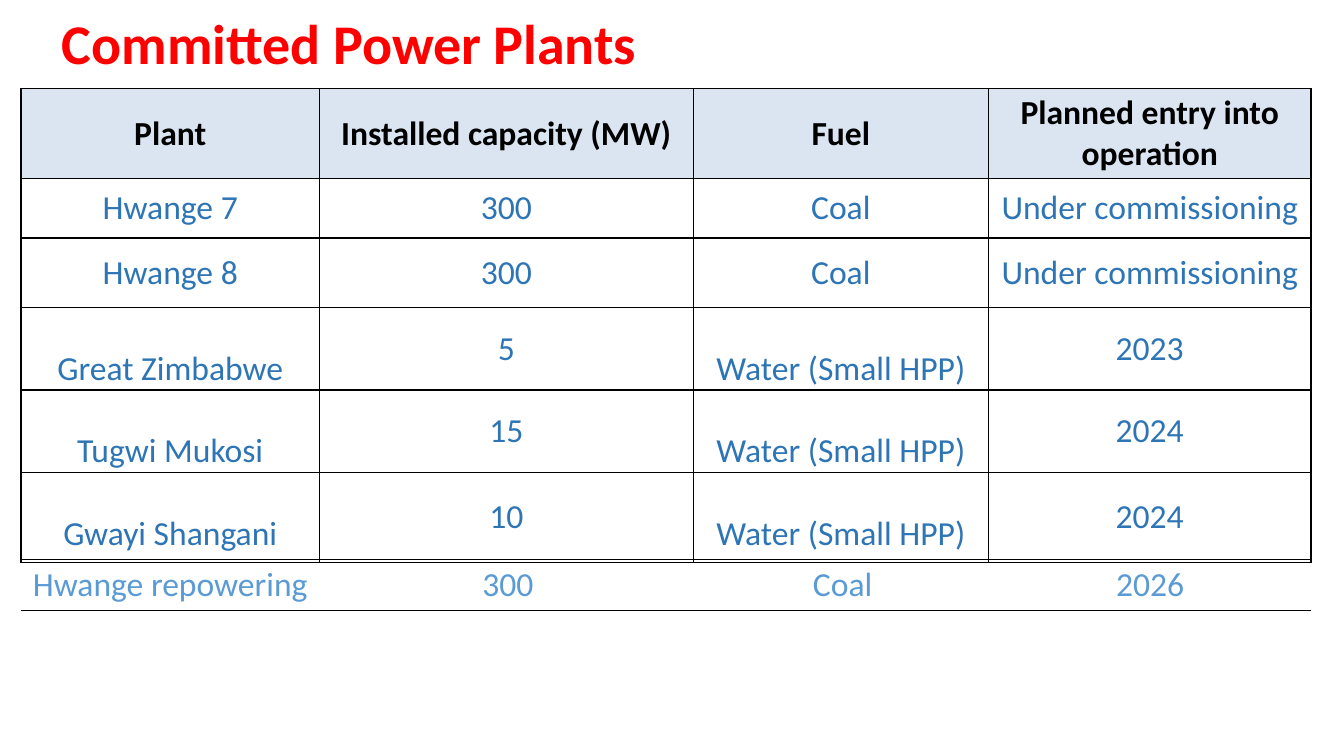
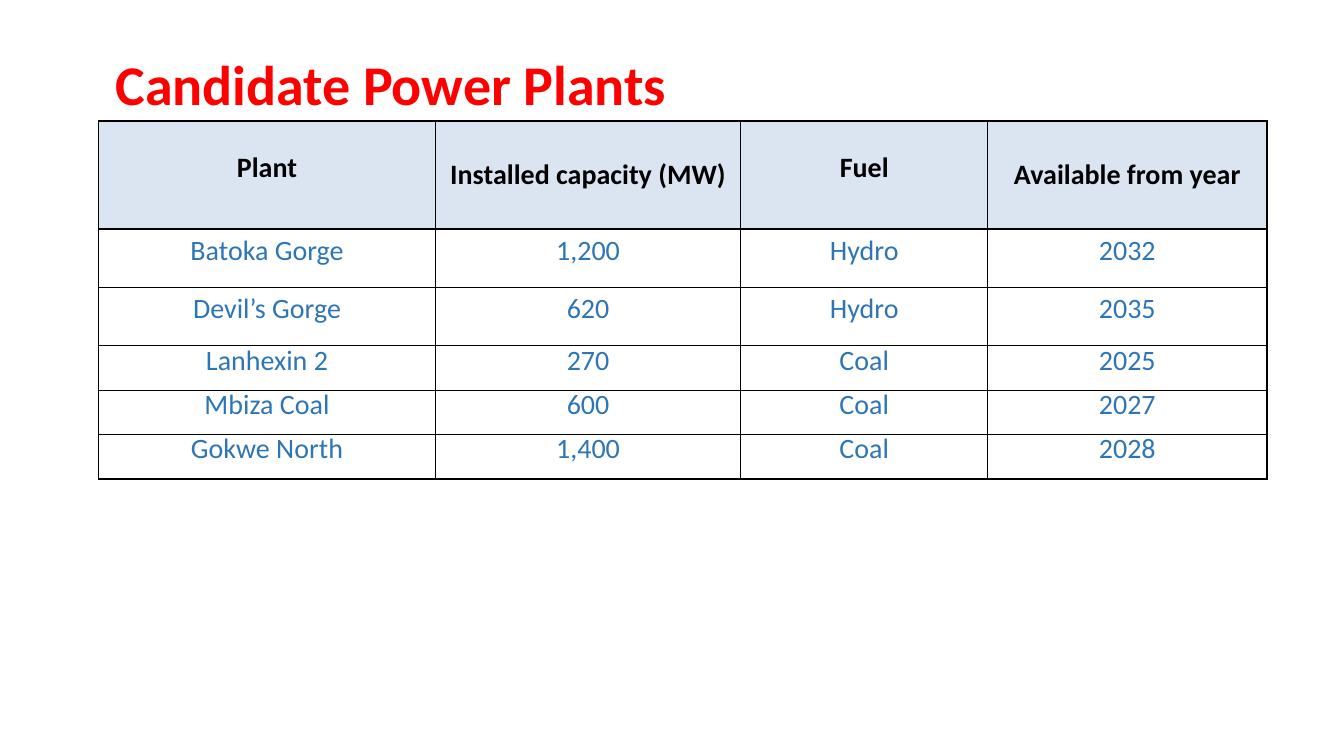
from dataclasses import dataclass

from lxml import etree
from pptx import Presentation
from pptx.dml.color import RGBColor
from pptx.enum.text import MSO_ANCHOR, PP_ALIGN
from pptx.oxml.ns import qn
from pptx.util import Cm, Pt

CENTER, LEFT = PP_ALIGN.CENTER, PP_ALIGN.LEFT
TOP, MIDDLE = MSO_ANCHOR.TOP, MSO_ANCHOR.MIDDLE
TITLE_ONLY = 5
SIDES = ("L", "R", "T", "B")


@dataclass(frozen=True)
class Theme:
    font: str = "Calibri"
    title: str = "FF0000"
    heading: str = "000000"
    body: str = "2E75B6"
    extra: str = "5B9BD5"
    header_fill: str = "DBE5F1"
    border: str = "000000"
    border_width: int = Pt(1)
    title_size: int = Pt(40)
    large: int = Pt(24)
    medium: int = Pt(20)
    tight_line: int = Pt(14)
    side_inset: int = Cm(0.18)
    drop: int = Cm(1.03)  # one line of large text


THEME = Theme()

COMMITTED = [
    ("Plant", "Installed capacity (MW)", "Fuel", "Planned entry into operation"),
    ("Hwange 7", "300", "Coal", "Under commissioning"),
    ("Hwange 8", "300", "Coal", "Under commissioning"),
    ("Great Zimbabwe", "5", "Water (Small HPP)", "2023"),
    ("Tugwi Mukosi", "15", "Water (Small HPP)", "2024"),
    ("Gwayi Shangani", "10", "Water (Small HPP)", "2024"),
]
REPOWERING = [("Hwange repowering", "300", "Coal", "2026")]
CANDIDATES = [
    ("Plant", "Installed capacity (MW)", "Fuel", "Available from year"),
    ("Batoka Gorge", "1,200", "Hydro", "2032"),
    ("Devil’s Gorge", "620", "Hydro", "2035"),
    ("Lanhexin 2", "270", "Coal", "2025"),
    ("Mbiza Coal", "600", "Coal", "2027"),
    ("Gokwe North", "1,400", "Coal", "2028"),
]


def style_font(para, size, color, bold=False):
    para.font.name = THEME.font
    para.font.size = size
    para.font.bold = bold
    para.font.color.rgb = RGBColor.from_string(color)


def add_page(deck, title, box):
    """Add a slide whose title fills box: left, top, width, height in cm."""
    page = deck.slides.add_slide(deck.slide_layouts[TITLE_ONLY])
    shape = page.shapes.title
    shape.left, shape.top, shape.width, shape.height = map(Cm, box)
    shape.text_frame.text = title
    shape.text_frame.vertical_anchor = MIDDLE
    para = shape.text_frame.paragraphs[0]
    para.alignment = LEFT
    para.line_spacing = 0.9
    style_font(para, THEME.title_size, THEME.title, bold=True)
    return page


def set_borders(cell, ruled):
    """Rule the sides named in ruled and clear the others."""
    properties = cell._tc.get_or_add_tcPr()
    for index, side in enumerate(SIDES):
        line = etree.Element(qn(f"a:ln{side}"), w=str(THEME.border_width))
        if side in ruled:
            fill = etree.SubElement(line, qn("a:solidFill"))
            etree.SubElement(fill, qn("a:srgbClr"), val=THEME.border)
        else:
            etree.SubElement(line, qn("a:noFill"))
        properties.insert(index, line)


def add_table(page, origin, widths, heights, rows, size, color, ruled=SIDES):
    """Place a plain, centred table at origin; all lengths are in cm."""
    left, top = origin
    frame = page.shapes.add_table(
        len(rows), len(widths), Cm(left), Cm(top), Cm(sum(widths)), Cm(sum(heights)))
    table = frame.table
    table.first_row = table.horz_banding = False
    for column, width in zip(table.columns, widths):
        column.width = Cm(width)
    for row, height, texts in zip(table.rows, heights, rows):
        row.height = Cm(height)
        for cell, text in zip(row.cells, texts):
            cell.text = text
            cell.fill.background()
            set_borders(cell, ruled)
            para = cell.text_frame.paragraphs[0]
            para.alignment = CENTER
            style_font(para, size, color)
    return table


def add_plant_table(page, origin, widths, heights, rows, size):
    """Add a ruled table with a shaded heading row and narrow insets."""
    table = add_table(page, origin, widths, heights, rows, size, THEME.body)
    for cell in table.iter_cells():
        cell.vertical_anchor = MIDDLE
        cell.margin_left = cell.margin_right = THEME.side_inset
        cell.margin_top = cell.margin_bottom = 0
    for cell in table.rows[0].cells:
        cell.fill.solid()
        cell.fill.fore_color.rgb = RGBColor.from_string(THEME.header_fill)
        style_font(cell.text_frame.paragraphs[0], size, THEME.heading, bold=True)
    return table


def add_committed_page(deck):
    page = add_page(deck, " Committed Power Plants", (0.99, 0.18, 29.21, 1.96))
    left, top = 0.53, 2.24
    table = add_plant_table(
        page, (left, top), (7.52, 9.42, 7.44, 8.13),
        (2.26, 1.5, 1.75, 2.08, 2.08, 2.26), COMMITTED, THEME.large)
    for row in range(3, len(COMMITTED)):
        for column in (0, 2):
            cell = table.cell(row, column)
            cell.vertical_anchor = TOP
            cell.margin_top = THEME.drop
    add_table(page, (left, top + 11.86), (7.52, 9.5, 7.37, 8.13), (1.27,),
              REPOWERING, THEME.large, THEME.extra, ruled=("T", "B"))


def add_candidate_page(deck):
    page = add_page(deck, " Candidate Power Plants", (2.34, 0.36, 29.21, 3.68))
    table = add_plant_table(
        page, (2.49, 3.05), (8.48, 7.7, 6.22, 7.04),
        (2.72, 1.47, 1.47, 1.12, 1.12, 1.12), CANDIDATES, THEME.medium)
    normal_headings = (table.cell(0, 1), table.cell(0, 3))
    for cell in table.iter_cells():
        if cell not in normal_headings:
            cell.text_frame.paragraphs[0].line_spacing = THEME.tight_line


def main():
    deck = Presentation()
    deck.slide_width, deck.slide_height = Cm(33.87), Cm(19.05)
    add_committed_page(deck)
    add_candidate_page(deck)
    deck.save("out.pptx")


if __name__ == "__main__":
    main()
